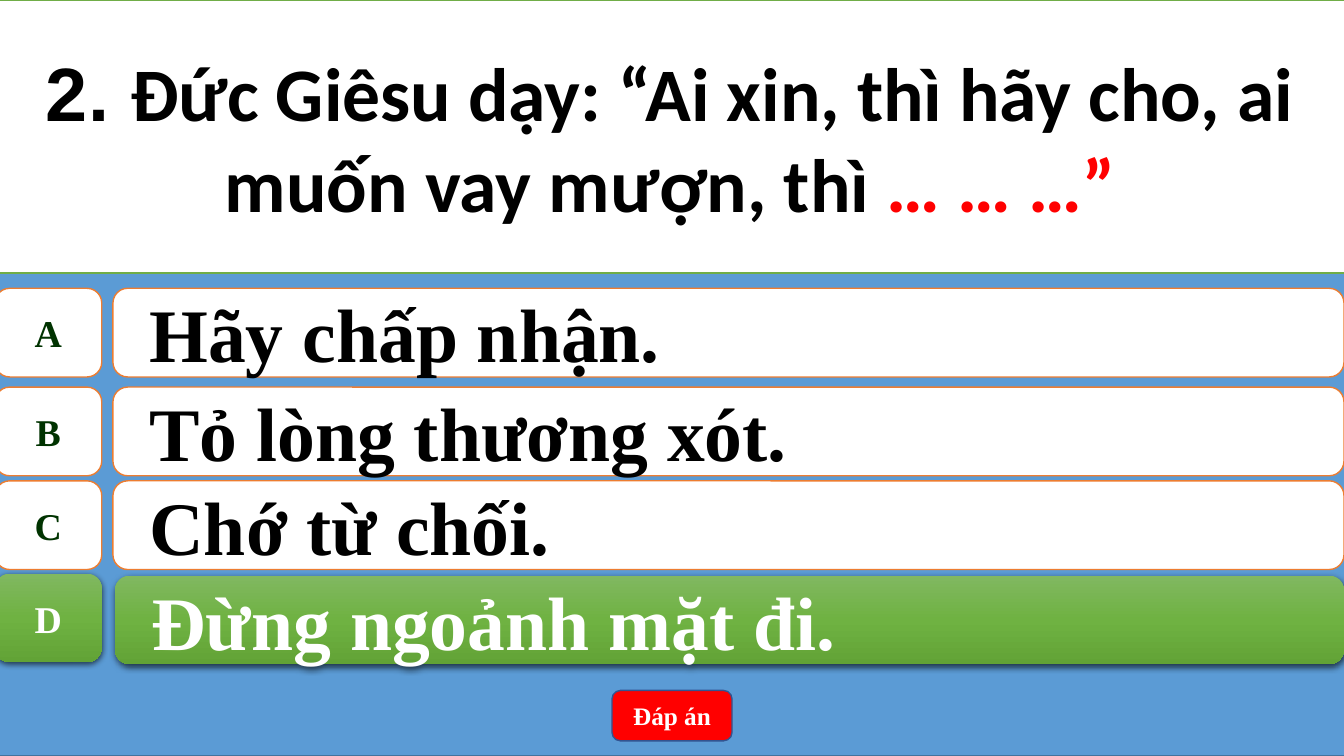
from copy import deepcopy
from lxml import etree
from pptx import Presentation
from pptx.dml.color import RGBColor
from pptx.enum import shapes, text
from pptx.oxml.ns import qn
from pptx.util import Inches, Pt

SERIF = "Times New Roman"
GREENS = ["81B861", "6FB242", "62A336"]


def paint(shape, fill, line):
    shape.shadow.inherit = False
    shape.fill.solid()
    shape.fill.fore_color.rgb = RGBColor.from_string(fill)
    shape.line.color.rgb = RGBColor.from_string(line)
    shape.line.width = Pt(1)


def style(font, name, size, color):
    font.name, font.size, font.bold = name, Pt(size), True
    font.color.rgb = RGBColor.from_string(color)


prs = Presentation()
prs.slide_width, prs.slide_height = Inches(13.33), Inches(7.5)
slide = prs.slides.add_slide(prs.slide_layouts[5])
kinds = shapes.MSO_SHAPE

# Question and backdrop
title = slide.shapes.title
title.left, title.top = Inches(-0.05), Inches(0)
title.width, title.height = Inches(13.39), Inches(2.71)
paint(title, "FFFFFF", "70AD47")
frame = title.text_frame
frame.auto_size = text.MSO_AUTO_SIZE.NONE
frame.word_wrap = True
frame.vertical_anchor = text.MSO_ANCHOR.MIDDLE
para = frame.paragraphs[0]
para.alignment = text.PP_ALIGN.CENTER
for words, face, color in [
    ("2. ", "Arial", "000000"),
    ("Đức Giêsu dạy: “Ai xin, thì hãy cho, ai muốn vay mượn, thì ", "Calibri", "000000"),
    ("… … …”", "Calibri", "FF0000"),
]:
    run = para.add_run()
    run.text = words
    style(run.font, face, 54, color)

back = slide.shapes.add_shape(
    kinds.RECTANGLE, Inches(-0.05), 0, Inches(13.39), Inches(7.5))
paint(back, "5B9BD5", "43739E")
title._element.addprevious(back._element)

# Answers: a letter tile and a wide bar in each row, the right one in green
answers = [
    ("A", "Hãy chấp nhận.", 2.86, 2.86),
    ("B", "Tỏ lòng thương xót.", 3.84, 3.84),
    ("C", "Chớ từ chối.", 4.77, 4.77),
    ("D", "Đừng ngoảnh mặt đi.", 5.69, 5.71),
]
for letter, answer, high, low in answers:
    right = letter == "D"
    left = 1.14 if right else 1.12
    tile = slide.shapes.add_shape(
        kinds.FLOWCHART_ALTERNATE_PROCESS,
        Inches(-0.05), Inches(high), Inches(1.06), Inches(0.88))
    bar = slide.shapes.add_shape(
        kinds.ROUNDED_RECTANGLE,
        Inches(left), Inches(low), Inches(13.33 - left), Inches(0.88))
    for shape, words, size, color in [
        (tile, letter, 27, "003300"), (bar, answer, 54, "000000")
    ]:
        paint(shape, "FFFFFF", "ED7D31")
        frame = shape.text_frame
        frame.text = words
        frame.word_wrap = shape is bar
        frame.vertical_anchor = text.MSO_ANCHOR.MIDDLE
        para = frame.paragraphs[0]
        para.alignment = text.PP_ALIGN.LEFT if shape is bar else text.PP_ALIGN.CENTER
        style(para.font, SERIF, size, "FFFFFF" if right else color)
        if right:
            shape.line.fill.background()
            shape.fill.gradient()
            shape.fill.gradient_angle = 270
            props = shape._element.spPr
            first = props.find(".//" + qn("a:gs"))
            first.addnext(deepcopy(first))
            for stop, tone, place in zip(shape.fill.gradient_stops, GREENS, [0, 0.5, 1]):
                stop.color.rgb = RGBColor.from_string(tone)
                stop.position = place
            shade = etree.SubElement(
                props.find(qn("a:effectLst")), qn("a:outerShdw"),
                blurRad=str(Pt(4.5)), dist=str(Pt(1.5)), dir="5400000",
                algn="ctr", rotWithShape="0")
            black = etree.SubElement(shade, qn("a:srgbClr"), val="000000")
            etree.SubElement(black, qn("a:alpha"), val="63000")
    para._p.get_or_add_pPr().set("marL", str(Inches(0.5)))
    para._p.get_or_add_pPr().set("indent", str(Inches(-0.28)))

# Answer button
button = slide.shapes.add_shape(
    kinds.ROUNDED_RECTANGLE, Inches(6.07), Inches(6.85), Inches(1.19), Inches(0.5))
paint(button, "FF0000", "325491")
button.text_frame.text = "Đáp án"
button.text_frame.vertical_anchor = text.MSO_ANCHOR.MIDDLE
para = button.text_frame.paragraphs[0]
para.alignment = text.PP_ALIGN.CENTER
style(para.font, SERIF, 18, "FFFFFF")

prs.save("out.pptx")
